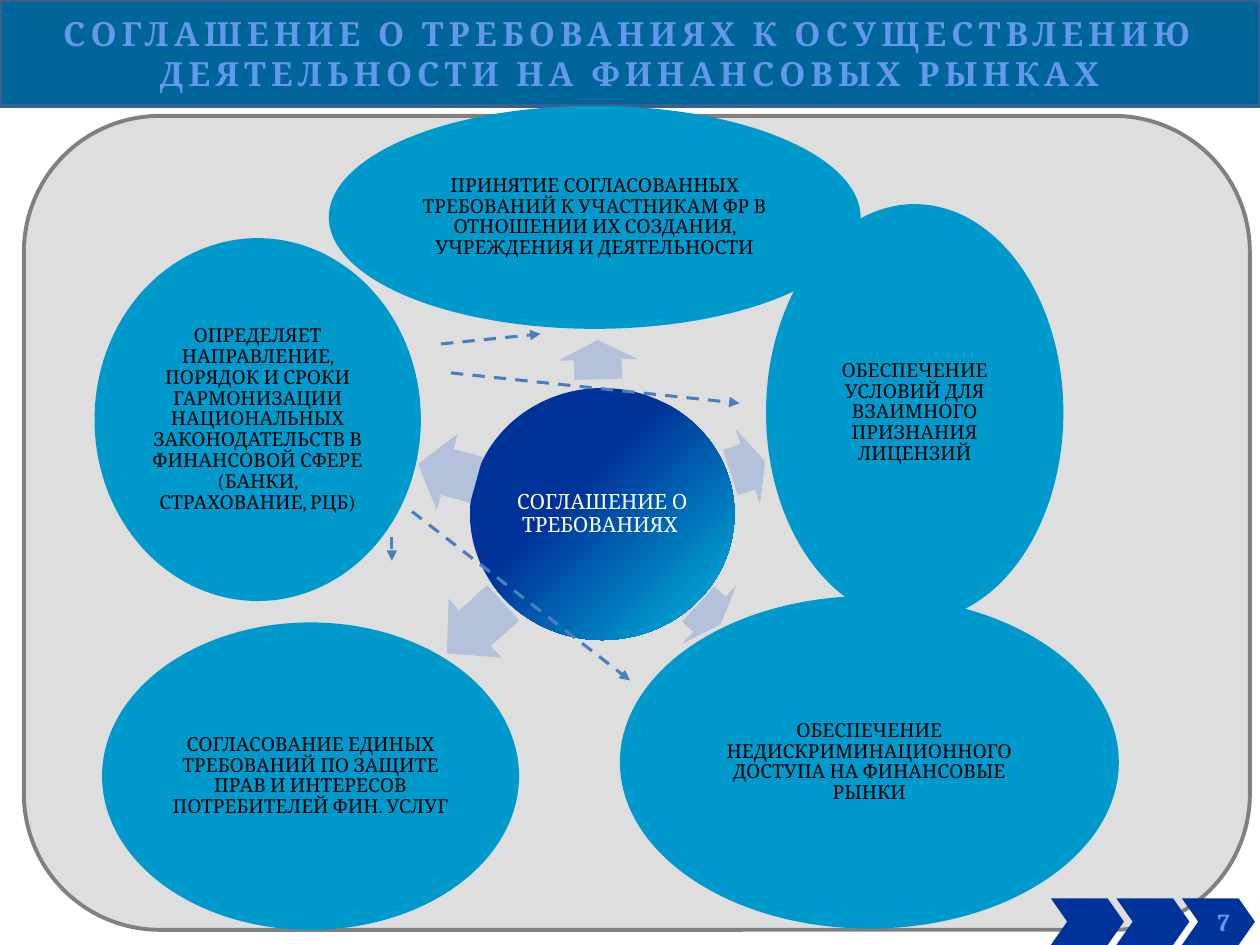
from lxml import etree
from pptx import Presentation
from pptx.dml.color import RGBColor
from pptx.enum.dml import MSO_LINE
from pptx.enum.shapes import MSO_CONNECTOR, MSO_SHAPE
from pptx.enum.text import MSO_ANCHOR, PP_ALIGN
from pptx.oxml.ns import qn
from pptx.util import Inches, Pt

RECT, PANEL = MSO_SHAPE.RECTANGLE, MSO_SHAPE.ROUNDED_RECTANGLE
OVAL, ARROW, CHEVRON = MSO_SHAPE.OVAL, MSO_SHAPE.RIGHT_ARROW, MSO_SHAPE.CHEVRON
STRAIGHT, DASH = MSO_CONNECTOR.STRAIGHT, MSO_LINE.DASH
MIDDLE, CENTER = MSO_ANCHOR.MIDDLE, PP_ALIGN.CENTER

COLS, ROWS = 100, 75
COLORS = {
    "panel": "D9D9D9", "panel_line": "808080",
    "banner": "006699", "banner_line": "3A5F8C", "heading": "6398ED",
    "navy": "003399", "blue": "0099CC", "arrow": "B3C1DB",
    "dash": "4B7EBC", "white": "FFFFFF", "black": "000000", "shadow": "265EA0",
}


def rgb(name):
    return RGBColor.from_string(COLORS[name])


class Deck:
    """Style and current slide; positions are columns and rows of the grid."""

    font = "Cambria"

    def __init__(self):
        self.prs = Presentation()
        self.prs.slide_width, self.prs.slide_height = Inches(10), Inches(7.5)
        self.s = self.prs.slides.add_slide(self.prs.slide_layouts[6])

    def x(self, col):
        return round(self.prs.slide_width * col / COLS)

    def y(self, row):
        return round(self.prs.slide_height * row / ROWS)

    def shape(self, kind, box, fill, adj=(), line=None, width=1, rotation=0):
        left, top, w, h = box
        sp = self.s.shapes.add_shape(kind, self.x(left), self.y(top), self.x(w), self.y(h))
        sp.shadow.inherit = False
        sp.rotation = rotation
        for i, value in enumerate(adj):
            sp.adjustments[i] = value
        sp.fill.solid()
        sp.fill.fore_color.rgb = rgb(fill)
        if line:
            sp.line.color.rgb = rgb(line)
            sp.line.width = Pt(width)
        else:
            sp.line.fill.background()
        return sp

    def opacity(self, sp, percent):
        color = sp.fill._xPr.find(".//" + qn("a:srgbClr"))
        etree.SubElement(color, qn("a:alpha"), val=str(percent * 1000))

    def gradient(self, sp, stops, angle):
        sp.fill.gradient()
        sp.fill.gradient_angle = angle
        for stop, (position, color) in zip(sp.fill.gradient_stops, stops):
            stop.position = position
            stop.color.rgb = rgb(color)

    def text(self, sp, text, size, color, inset=None, spacing=None, wrap=True):
        tf = sp.text_frame
        tf.word_wrap = wrap
        tf.vertical_anchor = MIDDLE
        if inset is not None:
            tf.margin_left = tf.margin_right = Inches(inset)
            tf.margin_top = tf.margin_bottom = Inches(inset)
        p = tf.paragraphs[0]
        p.alignment = CENTER
        if spacing:
            p.line_spacing = spacing
        r = p.add_run()
        r.text = text
        r.font.name, r.font.size = self.font, Pt(size)
        r.font.color.rgb = rgb(color)
        return r

    def heading(self, sp, text, size, wrap=True):
        """Bold, letter-spaced text with a soft shadow."""
        r = self.text(sp, text, size, "heading", wrap=wrap)
        r.font.bold = True
        rPr = r.font._element
        rPr.set("spc", "300")
        effects = etree.Element(qn("a:effectLst"))
        shadow = etree.SubElement(effects, qn("a:outerShdw"),
                                  blurRad="25400", dist="12700", dir="2700000")
        etree.SubElement(shadow, qn("a:srgbClr"), val=COLORS["shadow"])
        rPr.find(qn("a:solidFill")).addnext(effects)

    def bubble(self, box, text, size=11, color="black"):
        sp = self.shape(OVAL, box, "blue")
        self.text(sp, text, size, color, inset=0.02, spacing=0.9)
        return sp

    def dashed_arrow(self, x1, y1, x2, y2):
        c = self.s.shapes.add_connector(STRAIGHT, self.x(x1), self.y(y1), self.x(x2), self.y(y2))
        c.line.color.rgb = rgb("dash")
        c.line.width = Pt(1.75)
        c.line.dash_style = DASH
        etree.SubElement(c.line._get_or_add_ln(), qn("a:tailEnd"), type="triangle")
        etree.SubElement(c._element.spPr, qn("a:effectLst"))


# Arrow box, arrow rotation, bubble box, bubble text
BRANCHES = [
    ((45.9, 25.4, 3.1, 6.3), 268.6, (26.1, 8.4, 42.2, 17.7),
     "ПРИНЯТИЕ СОГЛАСОВАННЫХ ТРЕБОВАНИЙ К УЧАСТНИКАМ ФР В ОТНОШЕНИИ ИХ СОЗДАНИЯ, "
     "УЧРЕЖДЕНИЯ И ДЕЯТЕЛЬНОСТИ"),
    ((57.9, 33.9, 2.9, 6.3), 342, (60.8, 16.2, 23.6, 33.1),
     "ОБЕСПЕЧЕНИЕ УСЛОВИЙ ДЛЯ ВЗАИМНОГО ПРИЗНАНИЯ ЛИЦЕНЗИЙ"),
    ((55.1, 45.6, 2.4, 6.3), 42.7, (49.2, 47.3, 39.6, 26.4),
     "ОБЕСПЕЧЕНИЕ НЕДИСКРИМИНАЦИОННОГО ДОСТУПА НА ФИНАНСОВЫЕ РЫНКИ"),
    ((34.7, 46.7, 6, 6.3), 138.1, (8.1, 49.4, 33.1, 24.4),
     "СОГЛАСОВАНИЕ ЕДИНЫХ ТРЕБОВАНИЙ ПО ЗАЩИТЕ ПРАВ И ИНТЕРЕСОВ "
     "ПОТРЕБИТЕЛЕЙ ФИН. УСЛУГ"),
    ((33.1, 34.3, 4.8, 6.3), 195.4, (7.5, 18.9, 25.9, 28.8),
     "ОПРЕДЕЛЯЕТ НАПРАВЛЕНИЕ, ПОРЯДОК И СРОКИ ГАРМОНИЗАЦИИ НАЦИОНАЛЬНЫХ "
     "ЗАКОНОДАТЕЛЬСТВ В ФИНАНСОВОЙ СФЕРЕ (БАНКИ, СТРАХОВАНИЕ, РЦБ)"),
]
LINKS = [(35, 27.3, 42.9, 26.5), (35.8, 29.6, 58.7, 32),
         (32.7, 40.6, 50, 54), (31.1, 42.6, 31.1, 44.5)]


def main():
    deck = Deck()

    # Background panel and title banner
    panel = deck.shape(PANEL, (1.9, 9.2, 97.3, 64.6), "panel", [0.167], "panel_line", 2.25)
    deck.opacity(panel, 86)
    banner = deck.shape(RECT, (0, 0, 100, 8.4), "banner", line="banner_line", width=2)
    deck.heading(banner, "СОГЛАШЕНИЕ О ТРЕБОВАНИЯХ К ОСУЩЕСТВЛЕНИЮ "
                         "ДЕЯТЕЛЬНОСТИ НА ФИНАНСОВЫХ РЫНКАХ", 19)

    # Hub with its branches
    hub = deck.bubble((37.3, 30.8, 21, 20), "СОГЛАШЕНИЕ О ТРЕБОВАНИЯХ ", 12, "white")
    deck.gradient(hub, [(0.4, "navy"), (0.85, "blue")], 315)
    for arrow_box, rotation, bubble_box, text in BRANCHES:
        deck.shape(ARROW, arrow_box, "arrow", [0.6, 0.5], rotation=rotation)
        deck.bubble(bubble_box, text)

    # Dashed links
    for link in LINKS:
        deck.dashed_arrow(*link)

    # Page number chevrons, right to left
    chevrons = [deck.shape(CHEVRON, (93.8 - 5.2 * i, 71.3, 5.8, 3.7), "navy", [0.35])
                for i in range(3)]
    deck.heading(chevrons[0], " 7", 14, wrap=False)

    deck.prs.save("out.pptx")


if __name__ == "__main__":
    main()
